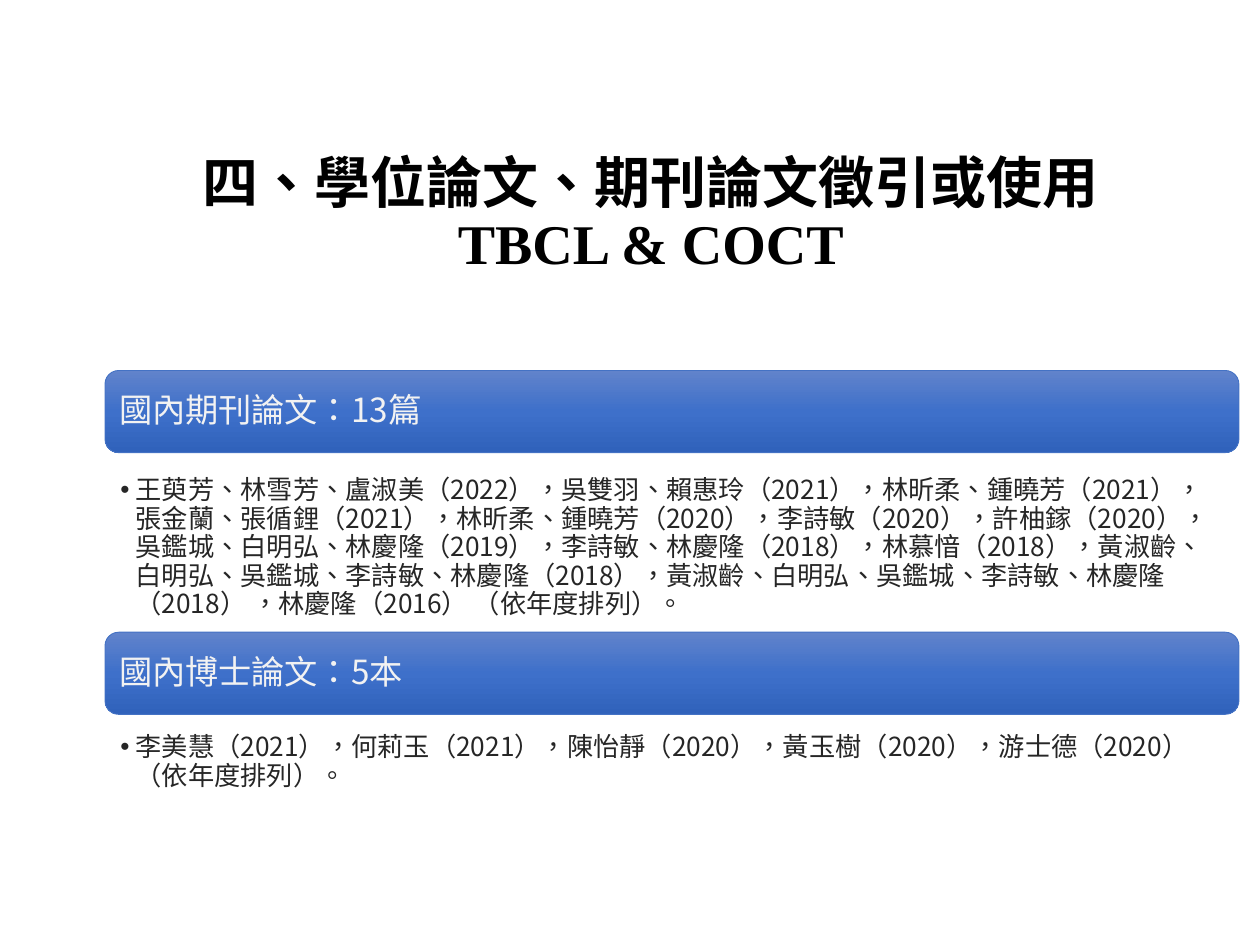
from copy import deepcopy
from dataclasses import dataclass

from lxml.etree import SubElement
from pptx import Presentation
from pptx.dml.color import RGBColor
from pptx.enum.shapes import MSO_SHAPE
from pptx.enum.text import MSO_ANCHOR, PP_ALIGN
from pptx.oxml.ns import qn
from pptx.util import Inches, Pt

COLUMNS = 60
CONTENT_COLUMNS = 54
TEXT_COLUMN = 4
BAR_COLUMN = 5
BAR_SHARE = 0.087
CJK_FONT = "Noto Sans CJK SC"
CJK_LANGUAGE = "zh-TW"

BLACK = RGBColor(0x00, 0x00, 0x00)
HEADING_TEXT = RGBColor(0xF2, 0xF2, 0xF2)
BODY_TEXT = RGBColor(0x26, 0x26, 0x26)
BAR_LINE = RGBColor(0x44, 0x72, 0xC4)
BAR_TOP = RGBColor(0x61, 0x83, 0xCB)
BAR_MIDDLE = RGBColor(0x3E, 0x70, 0xCA)
BAR_BOTTOM = RGBColor(0x30, 0x62, 0xBB)


@dataclass(frozen=True)
class Section:
    heading: str
    citations: str
    bar_top: float
    citations_top: float
    citations_height: float


SECTIONS = (
    Section(
        "國內期刊論文：13篇",
        "王萸芳、林雪芳、盧淑美（2022），吳雙羽、賴惠玲（2021），林昕柔、鍾曉芳（2021），"
        "張金蘭、張循鋰（2021），林昕柔、鍾曉芳（2020），李詩敏（2020），許柚鎵（2020），"
        "吳鑑城、白明弘、林慶隆（2019），李詩敏、林慶隆（2018），林慕愔（2018），"
        "黃淑齡、白明弘、吳鑑城、李詩敏、林慶隆（2018），"
        "黃淑齡、白明弘、吳鑑城、李詩敏、林慶隆（2018） ，林慶隆（2016） （依年度排列）。",
        0.392, 0.501, 0.18,
    ),
    Section(
        "國內博士論文：5本",
        "李美慧（2021），何莉玉（2021），陳怡靜（2020），黃玉樹（2020），游士德（2020）（依年度排列）。",
        0.669, 0.773, 0.095,
    ),
)

presentation = Presentation()
presentation.slide_width = Inches(10)
presentation.slide_height = Inches(7.5)
slide = presentation.slides.add_slide(presentation.slide_layouts[6])


def area(column: int, top: float, height: float) -> tuple[int, int, int, int]:
    column_width = presentation.slide_width / COLUMNS
    return (
        round(column * column_width),
        round(top * presentation.slide_height),
        round(CONTENT_COLUMNS * column_width),
        round(height * presentation.slide_height),
    )


def set_margins(frame, left: float, top: float, right: float, bottom: float) -> None:
    frame.word_wrap = True
    frame.margin_left, frame.margin_top = Inches(left), Inches(top)
    frame.margin_right, frame.margin_bottom = Inches(right), Inches(bottom)


def write_cjk(paragraph, text: str, size: int, color: RGBColor) -> None:
    run = paragraph.add_run()
    run.text = text
    paragraph.alignment = PP_ALIGN.LEFT
    paragraph.line_spacing = 0.9
    paragraph.font.name = CJK_FONT
    paragraph.font.size = Pt(size)
    paragraph.font.color.rgb = color
    run.font.name = CJK_FONT
    run.font._element.set("lang", CJK_LANGUAGE)
    SubElement(run.font._element, qn("a:ea"), typeface=CJK_FONT)


def shade(fill) -> None:
    fill.gradient()
    fill.gradient_angle = 270
    first = fill.gradient_stops[0]._gs
    first.addnext(deepcopy(first))
    for stop, position, color in zip(
        fill.gradient_stops, (0, 0.5, 1), (BAR_TOP, BAR_MIDDLE, BAR_BOTTOM)
    ):
        stop.position = position
        stop.color.rgb = color


def draw_heading(section: Section) -> None:
    bar = slide.shapes.add_shape(
        MSO_SHAPE.ROUNDED_RECTANGLE, *area(BAR_COLUMN, section.bar_top, BAR_SHARE)
    )
    bar.shadow.inherit = False
    shade(bar.fill)
    bar.line.color.rgb = BAR_LINE
    bar.line.width = Pt(0.5)
    frame = bar.text_frame
    set_margins(frame, 0.08, 0.08, 0.08, 0.08)
    frame.vertical_anchor = MSO_ANCHOR.MIDDLE
    write_cjk(frame.paragraphs[0], section.heading, 19, HEADING_TEXT)


def draw_citations(section: Section) -> None:
    left, top, width, height = area(
        TEXT_COLUMN, section.citations_top, section.citations_height
    )
    right, bottom = left + width, top + height
    outline = slide.shapes.build_freeform(left, top)
    outline.add_line_segments([(right, top), (right, bottom), (left, bottom)])
    citations = outline.convert_to_shape()
    citations.shadow.inherit = False
    citations.fill.background()
    citations.line.fill.background()
    frame = citations.text_frame
    set_margins(frame, 0.29, 0.03, 0.15, 0.03)
    frame.vertical_anchor = MSO_ANCHOR.TOP
    paragraph = frame.paragraphs[0]
    paragraph.level = 1
    properties = paragraph._p.get_or_add_pPr()
    properties.set("marL", str(Inches(0.12)))
    properties.set("indent", str(-Inches(0.12)))
    SubElement(properties, qn("a:buFont"), typeface="Arial")
    SubElement(properties, qn("a:buChar"), char="•")
    write_cjk(paragraph, section.citations, 15, BODY_TEXT)


def draw_title() -> None:
    title = slide.shapes.add_textbox(*area(TEXT_COLUMN, 0.166, 0.125))
    frame = title.text_frame
    frame.word_wrap = True
    frame.vertical_anchor = MSO_ANCHOR.MIDDLE
    paragraph = frame.paragraphs[0]
    paragraph.alignment = PP_ALIGN.CENTER
    paragraph.line_spacing = 0.9
    paragraph.font.size = Pt(32)
    paragraph.font.bold = True
    paragraph.font.color.rgb = BLACK
    topic = paragraph.add_run()
    topic.text = "四、學位論文、期刊論文徵引或使用"
    topic.font.name = "Arial"
    topic.font._element.set("lang", CJK_LANGUAGE)
    paragraph.add_line_break()
    corpora = paragraph.add_run()
    corpora.text = "TBCL & COCT"
    corpora.font.name = "Times New Roman"


for section in SECTIONS:
    draw_heading(section)
    draw_citations(section)
draw_title()
presentation.save("out.pptx")
